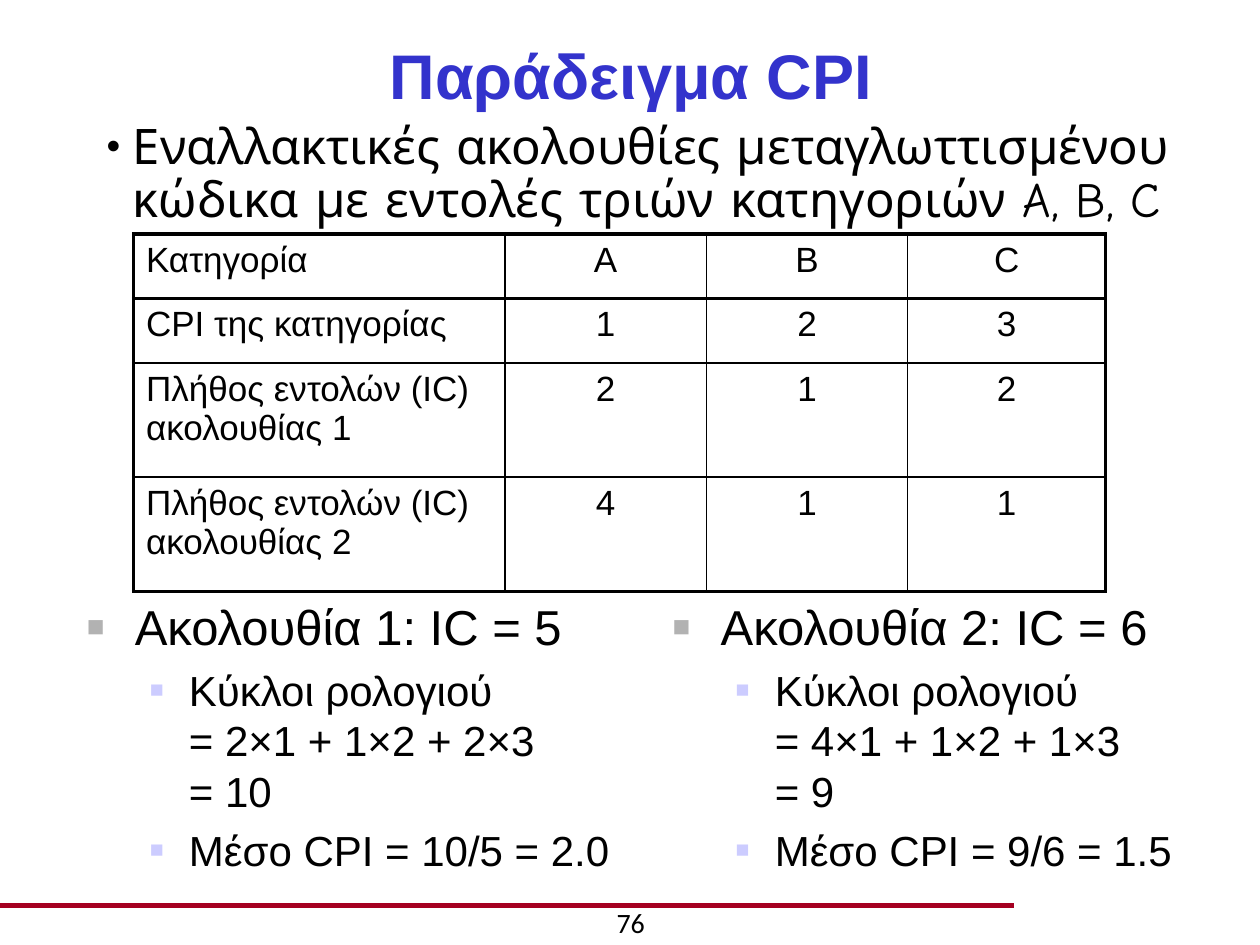
from dataclasses import dataclass
from typing import Optional

from lxml import etree
from pptx import Presentation
from pptx.dml.color import RGBColor
from pptx.enum.shapes import MSO_CONNECTOR
from pptx.enum.text import MSO_ANCHOR, PP_ALIGN
from pptx.oxml.ns import qn
from pptx.util import Cm, Pt

LEFT, CENTER = PP_ALIGN.LEFT, PP_ALIGN.CENTER
TOP, MIDDLE = MSO_ANCHOR.TOP, MSO_ANCHOR.MIDDLE
STRAIGHT = MSO_CONNECTOR.STRAIGHT
BLACK, BLUE, RED = "000000", "3333CC", "A50021"
THIN, THICK = 1, 2.25


@dataclass(frozen=True)
class Bullet:
    """A bullet mark with its indent in centimetres and size in percent."""

    mark: str
    size: int
    margin: float
    hanging: float
    color: str = BLACK


@dataclass(frozen=True)
class Line:
    """One paragraph and its look; a newline in the text is a line break."""

    text: str
    size: float
    font: str = "Arial"
    color: str = BLACK
    bold: bool = False
    align: PP_ALIGN = LEFT
    bullet: Optional[Bullet] = None
    before: float = 0
    spacing: float = 1.0
    level: int = 0


@dataclass(frozen=True)
class Sequence:
    """The figures of one code sequence and the place of its text."""

    left: float
    width: float
    heading: str
    cycles: str
    average: str


DOT = Bullet("•", 80, 0.53, 0.53)
GRAY_SQUARE = Bullet("■", 60, 0.97, 0.97, "B2B2B2")
LILAC_SQUARE = Bullet("■", 55, 2.06, 0.79, "CCCCFF")

COLUMN_WIDTHS = (7.49, 4.06, 4.06, 3.99)
ROW_HEIGHTS = (1.3, 1.3, 2.3, 2.3)
ROWS = (
    ("Κατηγορία", "A", "B", "C"),
    ("CPI της κατηγορίας", "1", "2", "3"),
    ("Πλήθος εντολών (IC) ακολουθίας 1", "2", "1", "2"),
    ("Πλήθος εντολών (IC) ακολουθίας 2", "4", "1", "1"),
)
SEQUENCES = (
    Sequence(1.5, 11.2, "Ακολουθία 1: IC = 5",
             "Κύκλοι ρολογιού\n= 2×1 + 1×2 + 2×3\n= 10", "Μέσο CPI = 10/5 = 2.0"),
    Sequence(13.31, 10.8, "Ακολουθία 2: IC = 6",
             "Κύκλοι ρολογιού\n= 4×1 + 1×2 + 1×3\n= 9", "Μέσο CPI = 9/6 = 1.5"),
)


def rgb(color: str) -> RGBColor:
    """Turn a hex string into a colour."""
    return RGBColor.from_string(color)


def add_bullet(paragraph, bullet: Bullet) -> None:
    """Give a paragraph a bullet and a hanging indent."""
    properties = paragraph._p.get_or_add_pPr()
    properties.set("marL", str(Cm(bullet.margin)))
    properties.set("indent", str(-Cm(bullet.hanging)))
    color = etree.SubElement(properties, qn("a:buClr"))
    etree.SubElement(color, qn("a:srgbClr"), val=bullet.color)
    etree.SubElement(properties, qn("a:buSzPct"), val=str(bullet.size * 1000))
    etree.SubElement(properties, qn("a:buFont"), typeface="Arial")
    etree.SubElement(properties, qn("a:buChar"), char=bullet.mark)


def write_line(paragraph, line: Line) -> None:
    """Fill a paragraph run by run."""
    if line.bullet:
        add_bullet(paragraph, line.bullet)
    paragraph.level = line.level
    paragraph.alignment = line.align
    paragraph.line_spacing = line.spacing
    paragraph.space_before = Pt(line.before)
    for index, text in enumerate(line.text.split("\n")):
        if index:
            paragraph.add_line_break()
        run = paragraph.add_run()
        run.text = text
        run.font.name = line.font
        run.font.size = Pt(line.size)
        run.font.bold = line.bold
        run.font.color.rgb = rgb(line.color)


def add_text(slide, left: float, top: float, width: float, height: float,
             lines: list[Line], anchor: MSO_ANCHOR = TOP) -> None:
    """Add a wrapping text box placed in centimetres."""
    shape = slide.shapes.add_textbox(Cm(left), Cm(top), Cm(width), Cm(height))
    frame = shape.text_frame
    frame.word_wrap = True
    frame.vertical_anchor = anchor
    for index, line in enumerate(lines):
        paragraph = frame.add_paragraph() if index else frame.paragraphs[0]
        write_line(paragraph, line)


def set_borders(cell, widths: dict[str, float]) -> None:
    """Draw the borders of a cell, keyed by side in schema order."""
    properties = cell._tc.get_or_add_tcPr()
    for index, (side, width) in enumerate(widths.items()):
        border = etree.Element(qn(f"a:ln{side}"), w=str(Pt(width)))
        fill = etree.SubElement(border, qn("a:solidFill"))
        etree.SubElement(fill, qn("a:srgbClr"), val=BLACK)
        properties.insert(index, border)


def add_category_table(slide) -> None:
    """Add the table of instruction categories."""
    last_row, last_column = len(ROWS) - 1, len(COLUMN_WIDTHS) - 1
    table = slide.shapes.add_table(
        len(ROWS), len(COLUMN_WIDTHS), Cm(2.69), Cm(4.72),
        Cm(sum(COLUMN_WIDTHS)), Cm(sum(ROW_HEIGHTS))).table
    table.first_row = table.horz_banding = False
    for column, width in zip(table.columns, COLUMN_WIDTHS):
        column.width = Cm(width)
    for row, height in zip(table.rows, ROW_HEIGHTS):
        row.height = Cm(height)
    for row_index, texts in enumerate(ROWS):
        for column_index, text in enumerate(texts):
            cell = table.cell(row_index, column_index)
            cell.fill.background()
            set_borders(cell, {
                "L": THICK if column_index == 0 else THIN,
                "R": THICK if column_index == last_column else THIN,
                "T": THICK if row_index <= 1 else THIN,
                "B": THICK if row_index in (0, last_row) else THIN,
            })
            align = CENTER if column_index else LEFT
            write_line(cell.text_frame.paragraphs[0], Line(text, 20, align=align))


def add_footer_rule(slide) -> None:
    """Add the red rule above the page number."""
    rule = slide.shapes.add_connector(STRAIGHT, Cm(0), Cm(18.26), Cm(20.45), Cm(18.26))
    rule.line.color.rgb = rgb(RED)
    rule.line.width = Pt(3)
    etree.SubElement(rule._element.spPr, qn("a:effectLst"))


def main() -> None:
    """Build and save the slide."""
    presentation = Presentation()
    presentation.slide_width, presentation.slide_height = Cm(25.4), Cm(19.05)
    slide = presentation.slides.add_slide(presentation.slide_layouts[6])
    add_footer_rule(slide)
    add_text(slide, 0.97, 0.64, 23.5, 1.7,
             [Line("Παράδειγμα CPI", 36, color=BLUE, bold=True, align=CENTER)], MIDDLE)
    add_text(slide, 1.9, 2.34, 23, 2.77, [Line(
        "Εναλλακτικές ακολουθίες μεταγλωττισμένου κώδικα με εντολές "
        "τριών κατηγοριών A, B, C", 28, "Comic Neue", bullet=DOT, spacing=0.9)])
    add_category_table(slide)
    for sequence in SEQUENCES:
        add_text(slide, sequence.left, 11.91, sequence.width, 5.79, [
            Line(sequence.heading, 28, bullet=GRAY_SQUARE),
            Line(sequence.cycles, 24, bullet=LILAC_SQUARE, before=5, level=1),
            Line(sequence.average, 24, bullet=LILAC_SQUARE, before=5, level=1),
        ])
    add_text(slide, 8.69, 18.14, 8.05, 1.02, [Line("76", 16, "Calibri", align=CENTER)])
    presentation.save("out.pptx")


if __name__ == "__main__":
    main()
